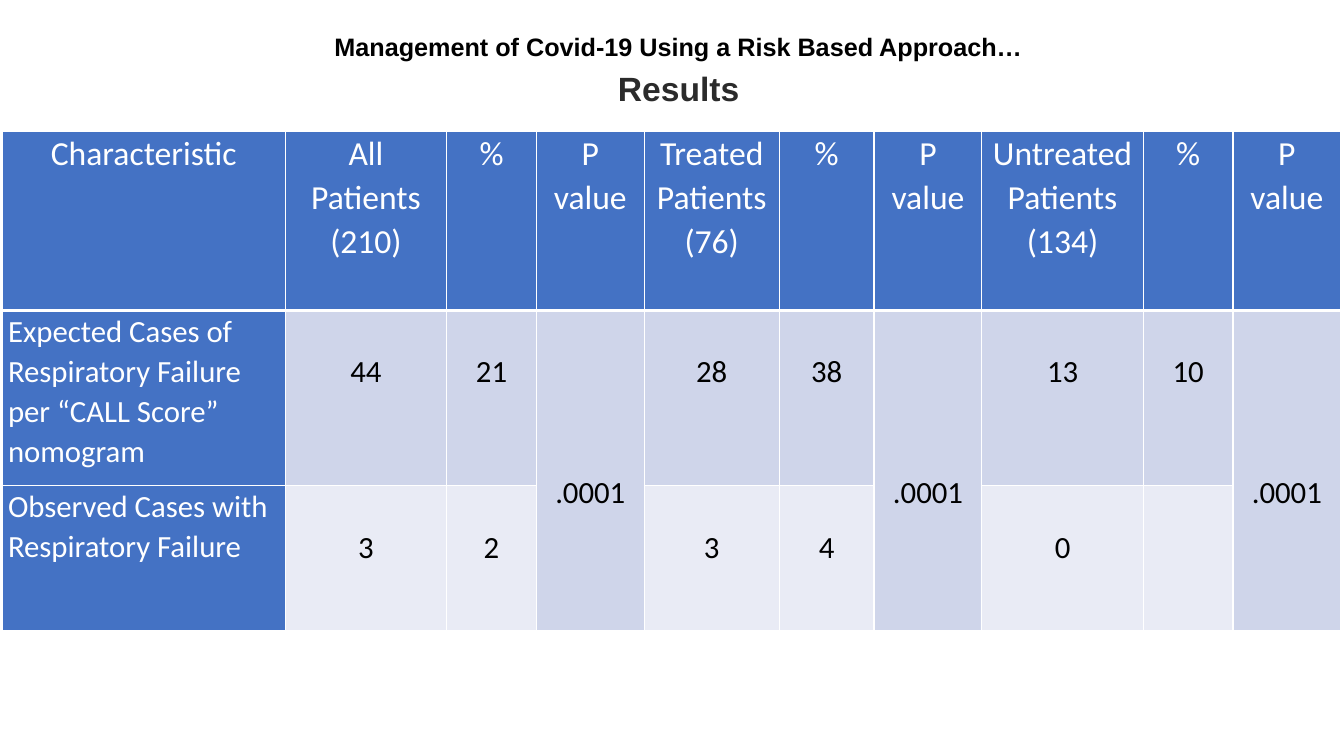
from dataclasses import dataclass

from lxml import etree
from pptx import Presentation
from pptx.dml.color import RGBColor
from pptx.enum.text import MSO_AUTO_SIZE, PP_ALIGN
from pptx.oxml.ns import qn
from pptx.slide import Slide
from pptx.table import _Cell
from pptx.util import Inches, Pt

CENTER = PP_ALIGN.CENTER
LEFT = PP_ALIGN.LEFT
FIT_SHAPE = MSO_AUTO_SIZE.SHAPE_TO_FIT_TEXT

WHITE = RGBColor(0xFF, 0xFF, 0xFF)
BLACK = RGBColor(0x00, 0x00, 0x00)
CHARCOAL = RGBColor(0x2B, 0x2B, 0x2B)
BLUE = RGBColor(0x44, 0x72, 0xC4)
BAND_DARK = RGBColor(0xCF, 0xD5, 0xEA)
BAND_LIGHT = RGBColor(0xE9, 0xEB, 0xF5)

COLUMN_WIDTHS = [2.81, 1.6, 0.89, 1.07, 1.34, 0.94, 1.07, 1.6, 0.89, 1.07]
ROW_HEIGHTS = [1.78, 1.74, 1.44]
P_VALUE_COLUMNS = [3, 6, 9]
BODY_LINE = 0.4

ROWS = [
    ["Characteristic", "All Patients\n(210)", "%", "P value",
     "Treated Patients\n(76)", "%", "P value",
     "Untreated Patients\n(134)", "%", "P value"],
    ["Expected Cases of Respiratory Failure per “CALL Score” nomogram",
     "44", "21", ".0001", "28", "38", ".0001", "13", "10", ".0001"],
    ["Observed Cases with Respiratory Failure",
     "3", "2", "", "3", "4", "", "0", "", ""],
]


@dataclass(frozen=True)
class CellStyle:
    fill: RGBColor
    color: RGBColor
    size: float
    alignment: PP_ALIGN
    lines_above: int = 0
    bottom_border: float = 1


@dataclass(frozen=True)
class Heading:
    text: str
    size: float
    color: RGBColor
    space_before: float


HEADER = CellStyle(BLUE, WHITE, 24, CENTER, bottom_border=3)
ROW_LABEL = CellStyle(BLUE, WHITE, 22, LEFT)
EXPECTED = CellStyle(BAND_DARK, BLACK, 22, CENTER, 1)
OBSERVED = CellStyle(BAND_LIGHT, BLACK, 22, CENTER, 1)
P_VALUE = CellStyle(BAND_DARK, BLACK, 22, CENTER, 4)

HEADINGS = [
    Heading("Management of Covid-19 Using a Risk Based Approach…", 18, BLACK, 0),
    Heading("Results", 24, CHARCOAL, 3),
]


def choose_style(row: int, column: int) -> CellStyle:
    if row == 0:
        return HEADER
    if column == 0:
        return ROW_LABEL
    if column in P_VALUE_COLUMNS:
        return P_VALUE
    return EXPECTED if row == 1 else OBSERVED


def add_borders(cell: _Cell, bottom_width: float) -> None:
    properties = cell._tc.get_or_add_tcPr()
    for side, width in (("L", 1), ("R", 1), ("T", 1), ("B", bottom_width)):
        line = etree.SubElement(properties, qn(f"a:ln{side}"), w=str(Pt(width)))
        fill = etree.SubElement(line, qn("a:solidFill"))
        etree.SubElement(fill, qn("a:srgbClr"), val=str(WHITE))


def fill_cell(cell: _Cell, text: str, style: CellStyle) -> None:
    cell.margin_left = cell.margin_right = Inches(0.06)
    cell.margin_top = Inches(style.lines_above * BODY_LINE if text else 0)
    cell.margin_bottom = 0
    add_borders(cell, style.bottom_border)
    cell.fill.solid()
    cell.fill.fore_color.rgb = style.fill
    cell.text = text
    for paragraph in cell.text_frame.paragraphs:
        paragraph.alignment = style.alignment
        paragraph.line_spacing = 1.07
        font = paragraph.font
        font.name = "Calibri"
        font.size = Pt(style.size)
        font.bold = False
        font.color.rgb = style.color


def add_results_table(slide: Slide) -> None:
    table = slide.shapes.add_table(
        len(ROW_HEIGHTS), len(COLUMN_WIDTHS), Inches(0.02), Inches(1.3),
        Inches(sum(COLUMN_WIDTHS)), Inches(sum(ROW_HEIGHTS))).table
    for column, width in zip(table.columns, COLUMN_WIDTHS):
        column.width = Inches(width)
    for row, height in zip(table.rows, ROW_HEIGHTS):
        row.height = Inches(height)
    for row_index, texts in enumerate(ROWS):
        for column_index, text in enumerate(texts):
            fill_cell(table.cell(row_index, column_index), text,
                      choose_style(row_index, column_index))
    for column_index in P_VALUE_COLUMNS:
        table.cell(1, column_index).merge(table.cell(2, column_index))


def add_headings(slide: Slide) -> None:
    text_box = slide.shapes.add_textbox(
        Inches(2.19), Inches(0.22), Inches(9.08), Inches(0.88))
    frame = text_box.text_frame
    frame.word_wrap = True
    frame.auto_size = FIT_SHAPE
    frame.margin_top = Inches(0.09)
    frame.text = "\n".join(heading.text for heading in HEADINGS)
    for paragraph, heading in zip(frame.paragraphs, HEADINGS):
        paragraph.alignment = CENTER
        paragraph.space_before = Pt(heading.space_before)
        paragraph.space_after = Pt(1.5)
        font = paragraph.font
        font.name = "Arial"
        font.size = Pt(heading.size)
        font.bold = True
        font.color.rgb = heading.color


def main() -> None:
    presentation = Presentation()
    presentation.slide_width = Inches(13.33)
    presentation.slide_height = Inches(7.5)
    slide = presentation.slides.add_slide(presentation.slide_layouts[6])
    add_results_table(slide)
    add_headings(slide)
    presentation.save("out.pptx")


if __name__ == "__main__":
    main()
